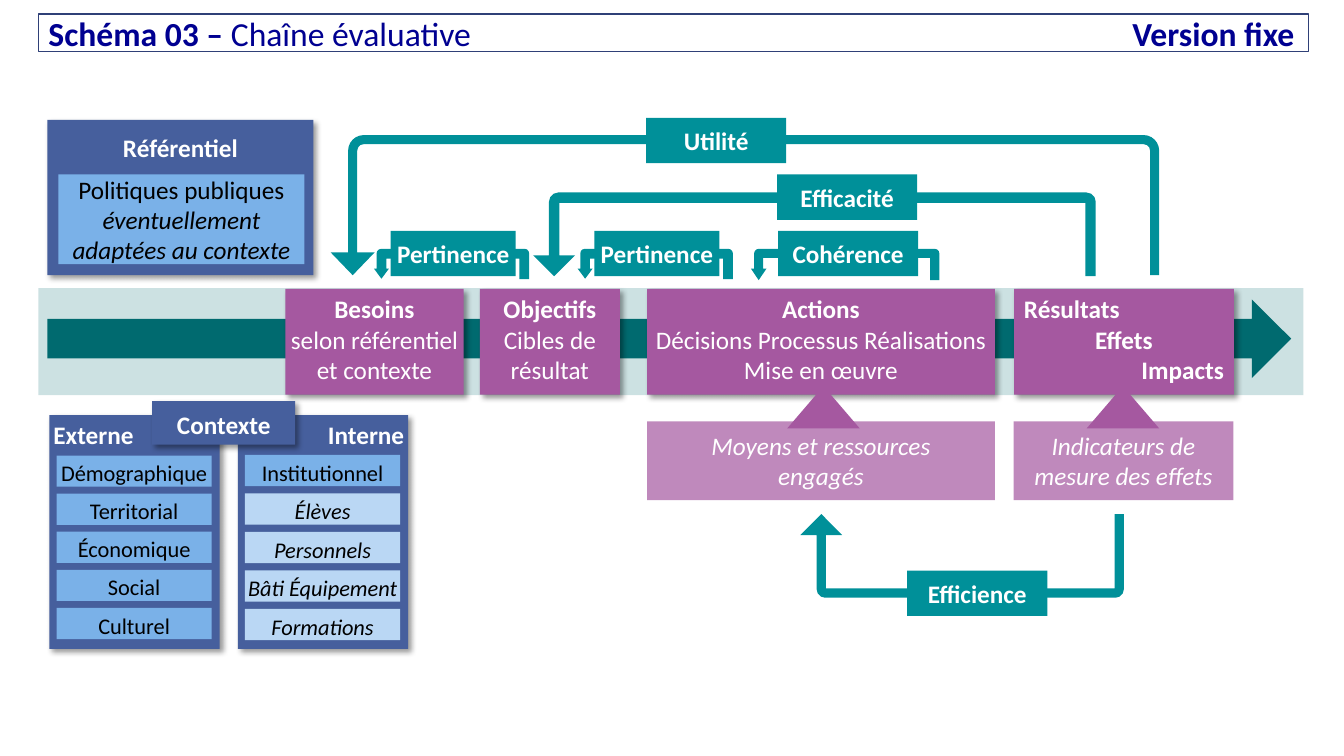
from lxml.etree import SubElement as Sub
from pptx import Presentation
from pptx.dml.color import RGBColor as Rgb
from pptx.enum.shapes import MSO_SHAPE as Geo
from pptx.enum.text import MSO_ANCHOR as Anchor, PP_ALIGN as Align
from pptx.oxml.ns import qn
from pptx.util import Pt

COLORS = {
    "white": "FFFFFF", "black": "000000", "navy": "000091", "frame": "2F4077",
    "deep": "006A6F", "teal": "009099", "plum": "A558A0",
    "blue": "465F9D", "sky": "7AB1E8", "pale": "BAD7F4",
}
TIGHT = (2.9, 3.6, 2.9, 3.6)
WIDE = (7.2, 3.6, 7.2, 3.6)
HEAD = (2.9, 2.9, 2.9, 3.6)
ITEM = (2.9, 5.8, 2.9, 3.6)
LEFT, MID, RIGHT = Align.LEFT, Align.CENTER, Align.RIGHT


class Board:
    font = "Calibri"

    def __init__(self, deck):
        self.slide = deck.slides.add_slide(deck.slide_layouts[5])

    def color(self, name):
        return Rgb.from_string(COLORS[name])

    def run(self, para, text, size, color, style=""):
        run = para.add_run()
        run.text = text
        font = run.font
        font.name, font.size = self.font, Pt(size)
        font.bold, font.italic = "b" in style, "i" in style
        font.color.rgb = self.color(color)

    def frame(self, shape, pad, anchor):
        frame = shape.text_frame
        frame.word_wrap = True
        frame.vertical_anchor = anchor
        (frame.margin_left, frame.margin_top,
         frame.margin_right, frame.margin_bottom) = map(Pt, pad)
        return frame

    def title(self, box, parts, tab):
        shape = self.slide.shapes.title
        shape.left, shape.top, shape.width, shape.height = map(Pt, box)
        shape.line.color.rgb = self.color("frame")
        shape.line.width = Pt(1)
        frame = self.frame(shape, WIDE, Anchor.MIDDLE)
        para = frame.paragraphs[0]
        para.alignment = LEFT
        for text, style in parts:
            self.run(para, text, 24, "navy", style)
        tabs = Sub(para._p.get_or_add_pPr(), qn("a:tabLst"))
        Sub(tabs, qn("a:tab"), pos=str(Pt(tab)), algn="r")

    def shape(self, kind, box, fill, alpha=100, flip="", adj=()):
        shape = self.slide.shapes.add_shape(kind, *map(Pt, box))
        shape.fill.solid()
        shape.fill.fore_color.rgb = self.color(fill)
        shape.line.fill.background()
        shape.shadow.inherit = False
        for spot, value in enumerate(adj):
            shape.adjustments[spot] = value
        props = shape.element.spPr
        for axis in flip:
            props.xfrm.set("flip" + axis, "1")
        if alpha < 100:
            tint = props.find(qn("a:solidFill")).find(qn("a:srgbClr"))
            Sub(tint, qn("a:alpha"), val=str(alpha * 1000))
        return shape

    def shade(self, shape):
        effects = shape.element.spPr.find(qn("a:effectLst"))
        cast = Sub(effects, qn("a:outerShdw"), blurRad=str(Pt(4)),
                   dist=str(Pt(3)), dir="2700000", algn="tl", rotWithShape="0")
        tint = Sub(cast, qn("a:srgbClr"), val=COLORS["black"])
        Sub(tint, qn("a:alpha"), val="40000")

    def block(self, box, fill, lines, pad=WIDE, anchor=Anchor.MIDDLE, size=18,
              color="white", shade=False, alpha=100, align=(MID,)):
        shape = self.shape(Geo.RECTANGLE, box, fill, alpha)
        if shade:
            self.shade(shape)
        frame = self.frame(shape, pad, anchor)
        for spot, (text, style) in enumerate(lines):
            para = frame.add_paragraph() if spot else frame.paragraphs[0]
            para.alignment = align[spot % len(align)]
            self.run(para, text, size, color, style)

    def panel(self, box, fill, lines, pad=TIGHT, align=(MID,)):
        self.block(box, fill, lines, pad, Anchor.TOP, shade=True, align=align)

    def loop(self, arrow, adj, label, text, pad=WIDE, flip="H"):
        self.shape(Geo.U_TURN_ARROW, arrow, "teal", flip=flip, adj=adj)
        self.block(label, "teal", [(text, "b")], pad)


def chain(board):
    board.shape(Geo.RECTANGLE, (27.4, 205.9, 903.6, 76.3), "deep", alpha=20)
    board.shape(Geo.RIGHT_ARROW, (33.8, 213.8, 888.5, 56.2), "deep")
    steps = [
        (203.8, 127.4, TIGHT, (MID,),
         [("Besoins", "b"), ("selon référentiel", ""), ("et contexte", "")]),
        (342.7, 100.1, WIDE, (MID,),
         [("Objectifs", "b"), ("Cibles de résultat", "")]),
        (462.2, 248.4, TIGHT, (MID,),
         [("Actions", "b"), ("Décisions Processus Réalisations", ""),
          ("Mise en œuvre", "")]),
        (724.3, 157, WIDE, (LEFT, MID, RIGHT),
         [("Résultats", "b"), ("Effets", "b"), ("Impacts", "b")]),
    ]
    for left, width, pad, align, lines in steps:
        board.panel((left, 206.3, width, 75.6), "plum", lines, pad, align)
    means = [
        (462.2, 248.4, 562.3, ["Moyens et ressources", "engagés"]),
        (724, 157, 776.2, ["Indicateurs de mesure des effets"]),
    ]
    for left, width, tip, texts in means:
        board.block((left, 301, width, 56.2), "plum",
                    [(text, "i") for text in texts], alpha=70)
        board.shape(Geo.ISOSCELES_TRIANGLE, (tip, 275.8, 51.8, 30.2), "plum")


def loops(board):
    for left in (267.1, 412.6):
        board.loop((left, 177.8, 110.9, 21.6),
                   (0.319, 0.25, 0.336, 0.145, 0.987),
                   (left + 12, 164.9, 89.3, 32.4), "Pertinence", TIGHT)
    board.loop((380.9, 137.5, 401.8, 59.8), (0.124, 0.25, 0.25, 0.111, 1),
               (555.1, 124.6, 100.1, 32.4), "Efficacité")
    board.loop((236.2, 96.5, 591.8, 100.1), (0.065, 0.157, 0.163, 0.111, 1),
               (461.5, 84.2, 100.1, 32.4), "Utilité")
    board.loop((536.4, 177.8, 134.6, 22.3), (0.29, 0.25, 0.37, 0.138, 1),
               (555.8, 164.9, 100.1, 32.4), "Cohérence")
    board.loop((571.7, 367.2, 231.1, 59.8), (0.111, 0.25, 0.251, 0.101, 1),
               (648, 407.5, 100.1, 32.4), "Efficience", flip="HV")


def context(board):
    board.panel((33.8, 85.7, 190.1, 110.9), "blue", [("Référentiel", "b")],
                (2.9, 8.6, 2.9, 3.6))
    board.block((41.8, 124.6, 175.7, 64.1), "sky",
                [("Politiques publiques", ""),
                 ("éventuellement adaptées au contexte", "i")],
                TIGHT, color="black")
    sides = [
        (35.3, "Externe", LEFT, 325.4, 27.2,
         [("Démographique", ""), ("Territorial", ""), ("Économique", ""),
          ("Social", ""), ("Culturel", "")]),
        (169.9, "Interne", RIGHT, 324.9, 27.5,
         [("Institutionnel", ""), ("Élèves", "i"), ("Personnels", "i"),
          ("Bâti Équipement", "i"), ("Formations", "i")]),
    ]
    for left, name, align, top, step, items in sides:
        board.panel((left, 296.6, 121.7, 167), "blue", [(name, "b")],
                    HEAD, (align,))
        for row, (text, style) in enumerate(items):
            pad = (0, 5.8, 0, 3.6) if text == "Bâti Équipement" else ITEM
            board.block((left + 5.1, top + row * step, 110.9, 22.3),
                        "pale" if style else "sky", [(text, style)],
                        pad, size=16, color="black")
    board.panel((108.7, 286.6, 102.2, 31), "blue", [("Contexte", "b")],
                (7.2, 5.8, 7.2, 3.6))


def main():
    deck = Presentation()
    deck.slide_width, deck.slide_height = Pt(960), Pt(540)
    board = Board(deck)
    board.title((27.4, 10.1, 907.2, 26.6),
                [("Schéma 03 – ", "b"), ("Chaîne évaluative\t", ""),
                 ("Version fixe", "b")], 890)
    chain(board)
    loops(board)
    context(board)
    deck.save("out.pptx")


if __name__ == "__main__":
    main()
